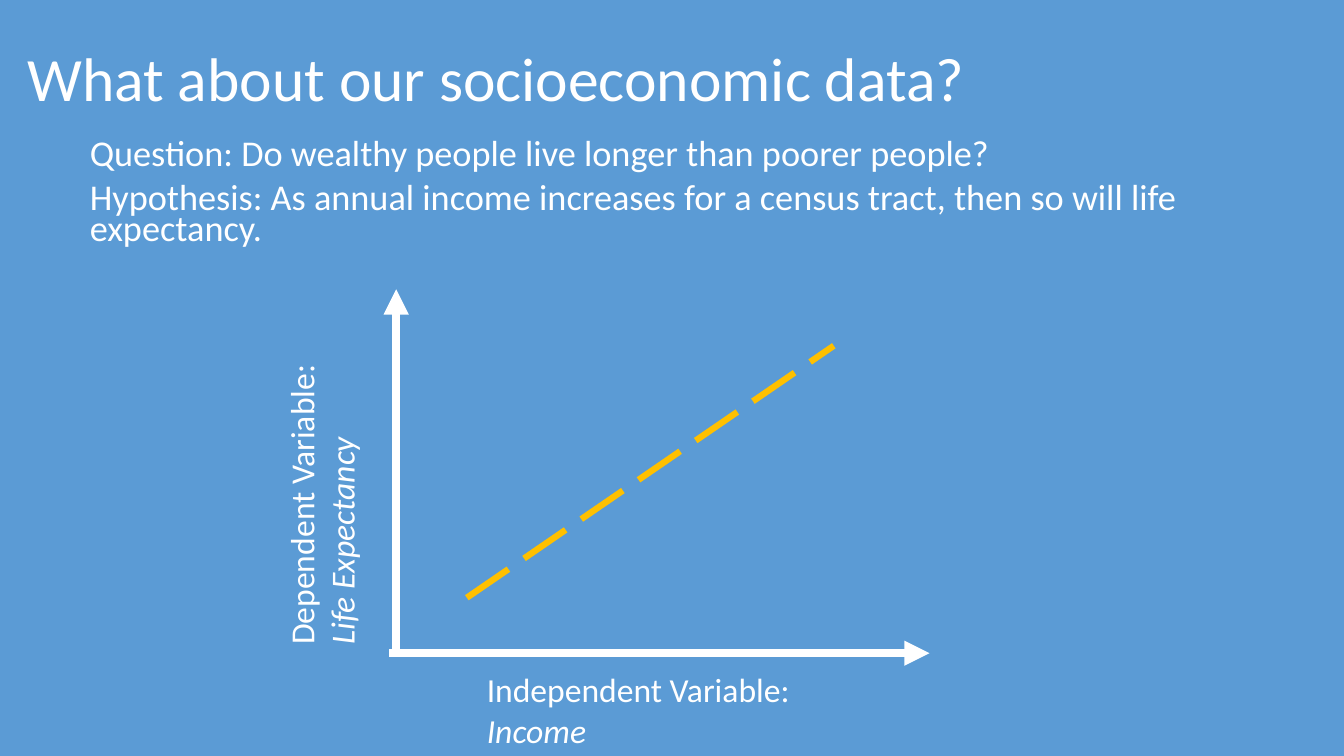
from dataclasses import dataclass

import lxml.etree
import pptx
import pptx.dml.color
import pptx.enum.dml
import pptx.enum.shapes
import pptx.enum.text
import pptx.oxml.ns
import pptx.util

Inches = pptx.util.Inches
Pt = pptx.util.Pt
qn = pptx.oxml.ns.qn


@dataclass(frozen=True)
class Theme:
    background: str = "5B9BD5"
    foreground: str = "FFFFFF"
    trend: str = "FFC000"
    font: str = "Calibri"
    title_size: float = 44
    body_size: float = 25.9
    label_size: float = 24
    axis_width: float = 6
    trend_width: float = 4.5


THEME = Theme()


@dataclass(frozen=True)
class Line:
    start: tuple[float, float]
    end: tuple[float, float]
    color: str
    width: float
    arrow: bool = False
    dashed: bool = False


@dataclass(frozen=True)
class AxisLabel:
    role: str
    variable: str
    box: tuple[float, float, float, float]
    rotation: float = 0


AXES = (
    Line((3.86, 6.48), (9.22, 6.48), THEME.foreground, THEME.axis_width, arrow=True),
    Line((3.93, 6.48), (3.93, 2.87), THEME.foreground, THEME.axis_width, arrow=True),
)
AXIS_LABELS = (
    AxisLabel("Independent Variable: ", "Income", (4.73, 6.59, 3.87, 0.91)),
    AxisLabel("Dependent Variable: ", "Life Expectancy", (1.48, 4.33, 3.42, 0.91), 270),
)
TREND = Line((4.63, 5.93), (8.27, 3.43), THEME.trend, THEME.trend_width, dashed=True)
STATEMENTS = (
    "Question: Do wealthy people live longer than poorer people?",
    "Hypothesis: As annual income increases for a census tract, then so will life expectancy.",
)


def rgb(color: str) -> pptx.dml.color.RGBColor:
    return pptx.dml.color.RGBColor.from_string(color)


def add_text(paragraph, text: str, *, size: float, italic: bool = False,
             line_spacing: float | None = None, space_before: float = 0) -> None:
    """Append a formatted run and set the spacing of its paragraph."""
    paragraph.alignment = pptx.enum.text.PP_ALIGN.LEFT
    paragraph.space_before = Pt(space_before)
    if line_spacing:
        paragraph.line_spacing = line_spacing
    run = paragraph.add_run()
    run.text = text
    run.font.name = THEME.font
    run.font.size = Pt(size)
    run.font.italic = italic
    run.font.color.rgb = rgb(THEME.foreground)


def place(shape, left: float, top: float, width: float, height: float) -> None:
    shape.left, shape.top = Inches(left), Inches(top)
    shape.width, shape.height = Inches(width), Inches(height)


def remove_bullet(paragraph) -> None:
    properties = paragraph._p.get_or_add_pPr()
    properties.set("marL", "0")
    properties.set("indent", "0")
    lxml.etree.SubElement(properties, qn("a:buNone"))


def add_line(slide, line: Line) -> None:
    connector = slide.shapes.add_connector(
        pptx.enum.shapes.MSO_CONNECTOR.STRAIGHT,
        *(Inches(value) for value in line.start + line.end))
    connector.line.color.rgb = rgb(line.color)
    connector.line.width = Pt(line.width)
    if line.dashed:
        connector.line.dash_style = pptx.enum.dml.MSO_LINE.LONG_DASH
    if line.arrow:
        outline = connector.line._get_or_add_ln()
        lxml.etree.SubElement(outline, qn("a:tailEnd"), type="triangle")
    lxml.etree.SubElement(connector._element.spPr, qn("a:effectLst"))


def add_axis_label(slide, label: AxisLabel) -> None:
    shape = slide.shapes.add_textbox(*(Inches(value) for value in label.box))
    shape.rotation = label.rotation
    frame = shape.text_frame
    frame.word_wrap = True
    frame.auto_size = pptx.enum.text.MSO_AUTO_SIZE.SHAPE_TO_FIT_TEXT
    paragraph = frame.paragraphs[0]
    add_text(paragraph, label.role, size=THEME.label_size)
    add_text(paragraph, label.variable, size=THEME.label_size, italic=True)


def add_heading(slide) -> None:
    title, body = slide.placeholders

    # Title
    place(title, 0.17, 0.08, 11.5, 1.45)
    title.text_frame.auto_size = pptx.enum.text.MSO_AUTO_SIZE.NONE
    title.text_frame.vertical_anchor = pptx.enum.text.MSO_ANCHOR.MIDDLE
    add_text(title.text_frame.paragraphs[0], "What about our socioeconomic data?",
             size=THEME.title_size, line_spacing=0.9)

    # Question and hypothesis
    place(body, 0.79, 1.36, 11.5, 1.23)
    frame = body.text_frame
    frame.auto_size = pptx.enum.text.MSO_AUTO_SIZE.NONE
    for index, statement in enumerate(STATEMENTS):
        paragraph = frame.add_paragraph() if index else frame.paragraphs[0]
        add_text(paragraph, statement, size=THEME.body_size, line_spacing=0.7, space_before=10)
        remove_bullet(paragraph)


def main() -> None:
    presentation = pptx.Presentation()
    presentation.slide_width = Inches(13.33)
    presentation.slide_height = Inches(7.5)
    slide = presentation.slides.add_slide(presentation.slide_layouts[1])
    slide.background.fill.solid()
    slide.background.fill.fore_color.rgb = rgb(THEME.background)

    add_heading(slide)

    # Graph of the expected relationship
    for axis in AXES:
        add_line(slide, axis)
    for label in AXIS_LABELS:
        add_axis_label(slide, label)
    add_line(slide, TREND)

    presentation.save("out.pptx")


if __name__ == "__main__":
    main()
